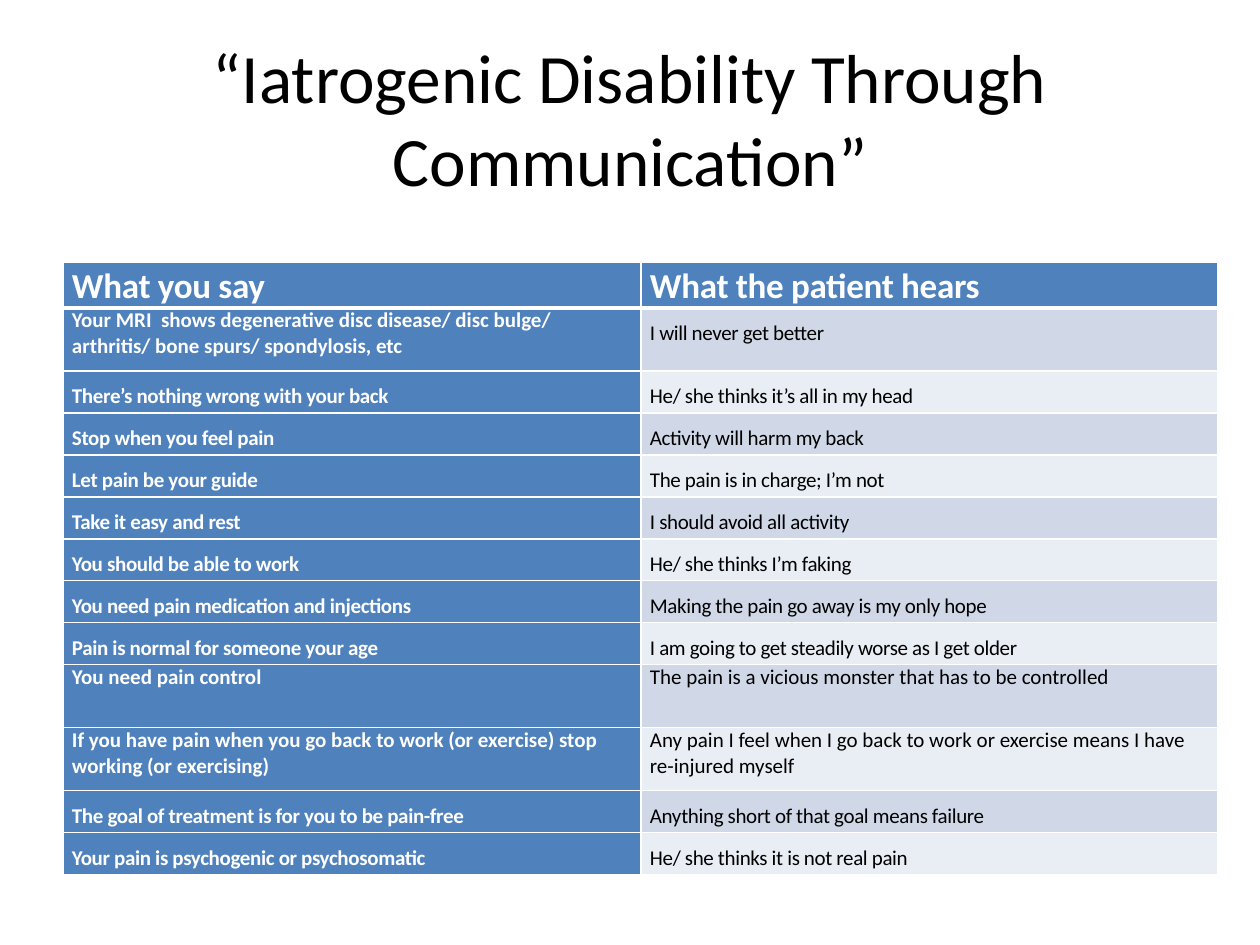
from lxml import etree
from pptx import Presentation
from pptx.dml.color import RGBColor
from pptx.enum.text import MSO_ANCHOR, MSO_AUTO_SIZE, PP_ALIGN
from pptx.oxml.ns import qn
from pptx.util import Pt

EMU_PER_PX = 914400 / 126
CENTER = PP_ALIGN.CENTER
TOP, MIDDLE = MSO_ANCHOR.TOP, MSO_ANCHOR.MIDDLE
NO_AUTOFIT = MSO_AUTO_SIZE.NONE
TITLE_ONLY = 5

FONT = "Calibri"
COLORS = {
    "white": "FFFFFF",
    "black": "000000",
    "blue": "4F81BD",
    "band_dark": "D0D8E8",
    "band_light": "E9EDF4",
}
HEADER_HEIGHT, SINGLE_HEIGHT, DOUBLE_HEIGHT = 45, 42, 63
HEADER_SPACING, BODY_SPACING = 1.07, 1.5
TIGHT = -20  # hundredths of a point between letters

HEADINGS = ("What you say", "What the patient hears")
# What is said, what is heard, whether the row is a tall one
PHRASES = [
    ("Your MRI  shows degenerative disc disease/ disc bulge/ arthritis/ bone spurs/ spondylosis, etc",
     "I will never get better", True),
    ("There’s nothing wrong with your back", "He/ she thinks it’s all in my head", False),
    ("Stop when you feel pain", "Activity will harm my back", False),
    ("Let pain be your guide", "The pain is in charge; I’m not", False),
    ("Take it easy and rest", "I should avoid all activity", False),
    ("You should be able to work", "He/ she thinks I’m faking", False),
    ("You need pain medication and injections", "Making the pain go away is my only hope", False),
    ("Pain is normal for someone your age", "I am going to get steadily worse as I get older", False),
    ("You need pain control", "The pain is a vicious monster that has to be controlled", True),
    ("If you have pain when you go back to work (or exercise) stop working (or exercising)",
     "Any pain I feel when I go back to work or exercise means I have re-injured myself", True),
    ("The goal of treatment is for you to be pain-free", "Anything short of that goal means failure", False),
    ("Your pain is psychogenic or psychosomatic", "He/ she thinks it is not real pain", False),
]


def px(length):
    return round(length * EMU_PER_PX)


def rgb(name):
    return RGBColor.from_string(COLORS[name])


class SlideBuilder:
    def __init__(self, slide):
        self.slide = slide

    def style(self, paragraph, size, color, bold=False):
        font = paragraph.font
        font.name, font.size, font.bold = FONT, Pt(size), bold
        font.color.rgb = rgb(color)

    def title(self, text, left, top, width, height):
        box = self.slide.shapes.title
        box.left, box.top, box.width, box.height = map(px, (left, top, width, height))
        frame = box.text_frame
        frame.text = text
        frame.word_wrap = True
        frame.auto_size = NO_AUTOFIT
        frame.vertical_anchor = MIDDLE
        para = frame.paragraphs[0]
        para.alignment = CENTER
        self.style(para, 39.6, "black")

    def table(self, left, top, columns, heights):
        frame = self.slide.shapes.add_table(
            len(heights), len(columns), px(left), px(top), px(sum(columns)), px(sum(heights)))
        table = frame.table
        for column, width in zip(table.columns, columns):
            column.width = px(width)
        for row, height in zip(table.rows, heights):
            row.height = px(height)
        return table

    def cell(self, cell, text, fill, size, color, bold, spacing, tracking, borders):
        cell.margin_left = cell.margin_right = px(9)
        cell.margin_top = cell.margin_bottom = 0
        cell.vertical_anchor = TOP
        cell.fill.solid()
        cell.fill.fore_color.rgb = rgb(fill)
        para = cell.text_frame.paragraphs[0]
        para.line_spacing = spacing
        span = para.add_run()
        span.text = text
        span.font._element.set("spc", str(tracking))
        self.style(para, size, color, bold)
        self.borders(cell, borders)

    def borders(self, cell, widths):
        properties = cell._tc.get_or_add_tcPr()
        for index, (side, width) in enumerate(zip("LRTB", widths)):
            line = etree.Element(qn(f"a:ln{side}"), w=str(Pt(width)))
            fill = etree.SubElement(line, qn("a:solidFill"))
            etree.SubElement(fill, qn("a:srgbClr"), val=COLORS["white"])
            properties.insert(index, line)


def main():
    deck = Presentation()
    deck.slide_width, deck.slide_height = px(1260), px(945)
    builder = SlideBuilder(deck.slides.add_slide(deck.slide_layouts[TITLE_ONLY]))

    builder.title("“Iatrogenic Disability Through Communication”", 63, 38, 1134, 158)

    # Table grid
    heights = [HEADER_HEIGHT] + [DOUBLE_HEIGHT if tall else SINGLE_HEIGHT for *_, tall in PHRASES]
    table = builder.table(63, 262, (578, 577), heights)

    # Header row
    for column, heading in enumerate(HEADINGS):
        builder.cell(table.cell(0, column), heading, "blue", 20, "white", True,
                     HEADER_SPACING, TIGHT, (1, 1, 1, 3))

    # Phrase rows: blue on the left, alternating bands on the right
    for row, (said, heard, tall) in enumerate(PHRASES, start=1):
        borders = (1, 1, 3 if row == 1 else 1, 1)
        band = "band_dark" if row % 2 else "band_light"
        said_style = (1.0, 0) if tall else (BODY_SPACING, TIGHT)
        heard_style = (BODY_SPACING, TIGHT) if row == 1 else said_style
        builder.cell(table.cell(row, 0), said, "blue", 12, "white", True, *said_style, borders)
        builder.cell(table.cell(row, 1), heard, band, 12, "black", False, *heard_style, borders)

    deck.save("out.pptx")


if __name__ == "__main__":
    main()
